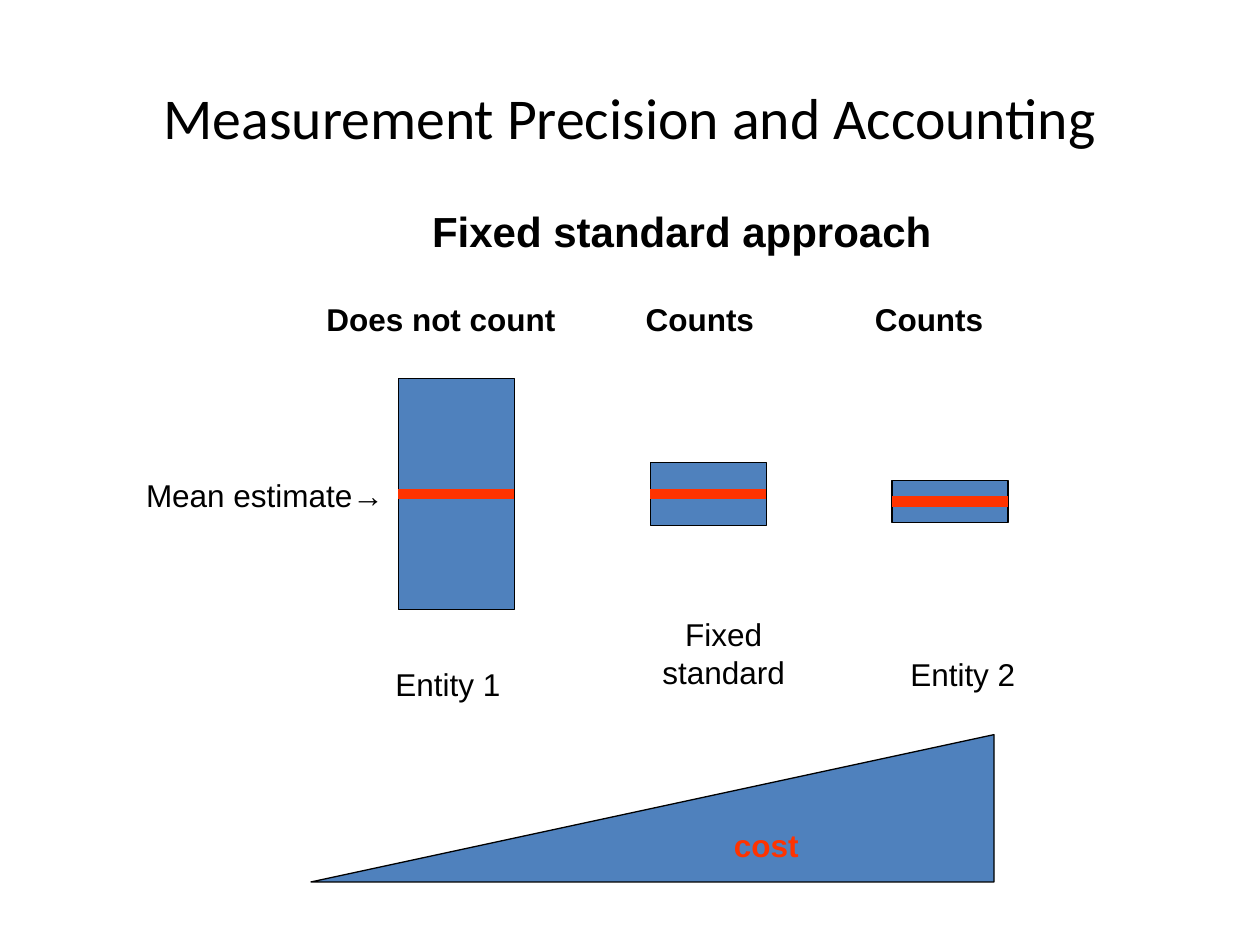
from collections import namedtuple
from dataclasses import dataclass

from lxml import etree
from pptx import Presentation
from pptx import util as u
from pptx.dml.color import RGBColor
from pptx.enum import shapes, text
from pptx.oxml import ns


@dataclass(frozen=True)
class Theme:
    ink: RGBColor = RGBColor(0x00, 0x00, 0x00)
    bar: RGBColor = RGBColor(0x4F, 0x81, 0xBD)
    accent: RGBColor = RGBColor(0xFF, 0x33, 0x00)
    title_font: str = "Calibri"
    body_font: str = "Arial"
    title_size: int = 33
    heading_size: int = 24
    body_size: int = 18
    outline: float = 0.75
    mean_line: float = 6


THEME = Theme()

# All lengths are centimetres
Box = namedtuple("Box", "left top width height")
# Shifts are from the centre of the bar; drops are from the top of the column
Entity = namedtuple("Entity", "verdict verdict_shift verdict_width bar_height mean_drop "
                              "name name_shift name_width name_drop")

COLUMNS = [
    (Box(8.03, 5.92, 2.34, 8.38),
     Entity("Does not count", -0.31, 5.13, 4.65, 4.04, "Entity 1", -0.17, 2.79, 7.36)),
    (Box(13.11, 5.92, 2.34, 8.38),
     Entity("Counts", -0.17, 2.72, 1.27, 4.04, "Fixed\vstandard", 0.31, 4.09, 6.35)),
    (Box(17.98, 5.92, 2.34, 8.38),
     Entity("Counts", -0.42, 2.72, 0.84, 4.19, "Entity 2", 0.26, 4.09, 7.16)),
]


def lengths(box):
    return [u.Cm(value) for value in box]


def write(frame, words, size=THEME.body_size, font=THEME.body_font,
          color=THEME.ink, bold=False, wrap=False,
          anchor=text.MSO_ANCHOR.TOP):
    """Fill a text frame with one centred paragraph."""
    frame.word_wrap = wrap
    frame.vertical_anchor = anchor
    para = frame.paragraphs[0]
    para.text = words
    para.alignment = text.PP_ALIGN.CENTER
    for span in para.runs:
        span.font.size = u.Pt(size)
        span.font.name = font
        span.font.bold = bold
        span.font.color.rgb = color


def add_label(page, box, words, **form):
    label = page.shapes.add_textbox(*lengths(box))
    write(label.text_frame, words, **form)


def add_filled(page, kind, box):
    shape = page.shapes.add_shape(kind, *lengths(box))
    shape.shadow.inherit = False
    shape.fill.solid()
    shape.fill.fore_color.rgb = THEME.bar
    shape.line.color.rgb = THEME.ink
    shape.line.width = u.Pt(THEME.outline)
    return shape


def add_mean_line(page, left, right, level):
    line = page.shapes.add_connector(
        shapes.MSO_CONNECTOR.STRAIGHT, *lengths((left, level, right, level)))
    line.line.color.rgb = THEME.accent
    line.line.width = u.Pt(THEME.mean_line)
    etree.SubElement(line._element.spPr, ns.qn("a:effectLst"))


def place_title(page, box, words):
    title = page.shapes.title
    title.left, title.top, title.width, title.height = lengths(box)
    write(title.text_frame, words, size=THEME.title_size, font=THEME.title_font,
          wrap=True, anchor=text.MSO_ANCHOR.MIDDLE)


def place_column(page, box, entity):
    """Verdict above, bar with its mean line, name below."""
    centre = box.left + box.width / 2
    mean = box.top + entity.mean_drop

    def centred(shift, width, top, height):
        return Box(centre + shift - width / 2, top, width, height)

    add_label(page, centred(entity.verdict_shift, entity.verdict_width, box.top, 1.02),
              entity.verdict, bold=True)
    add_filled(page, shapes.MSO_SHAPE.RECTANGLE,
               Box(box.left, mean - entity.bar_height / 2, box.width, entity.bar_height))
    add_mean_line(page, box.left, box.left + box.width, mean)
    name_height = 1.78 if "\v" in entity.name else 1.02
    add_label(page, centred(entity.name_shift, entity.name_width,
                            box.top + entity.name_drop, name_height),
              entity.name, wrap=True)


def place_cost_wedge(page, box):
    """Triangle that rises to the right."""
    wedge = add_filled(page, shapes.MSO_SHAPE.RIGHT_TRIANGLE, box)
    wedge._element.spPr.find(ns.qn("a:xfrm")).set("flipH", "1")
    write(wedge.text_frame, "cost", color=THEME.accent, bold=True,
          anchor=text.MSO_ANCHOR.MIDDLE)


def main():
    deck = Presentation()
    deck.slide_width, deck.slide_height = u.Cm(25.4), u.Cm(19.05)
    page = deck.slides.add_slide(deck.slide_layouts.get_by_name("Title Only"))

    # Headings
    place_title(page, Box(1.27, 0.76, 22.86, 3.18), "Measurement Precision and Accounting")
    add_label(page, Box(8.46, 4.01, 10.57, 1.27), "Fixed standard approach",
              size=THEME.heading_size, bold=True)

    # Bars with their labels
    for box, entity in COLUMNS:
        place_column(page, box, entity)
    add_label(page, Box(2.31, 9.47, 6.07, 1.02), "Mean estimate→", wrap=True)

    # Cost scale
    place_cost_wedge(page, Box(6.27, 14.81, 13.77, 2.97))

    deck.save("out.pptx")


if __name__ == "__main__":
    main()
